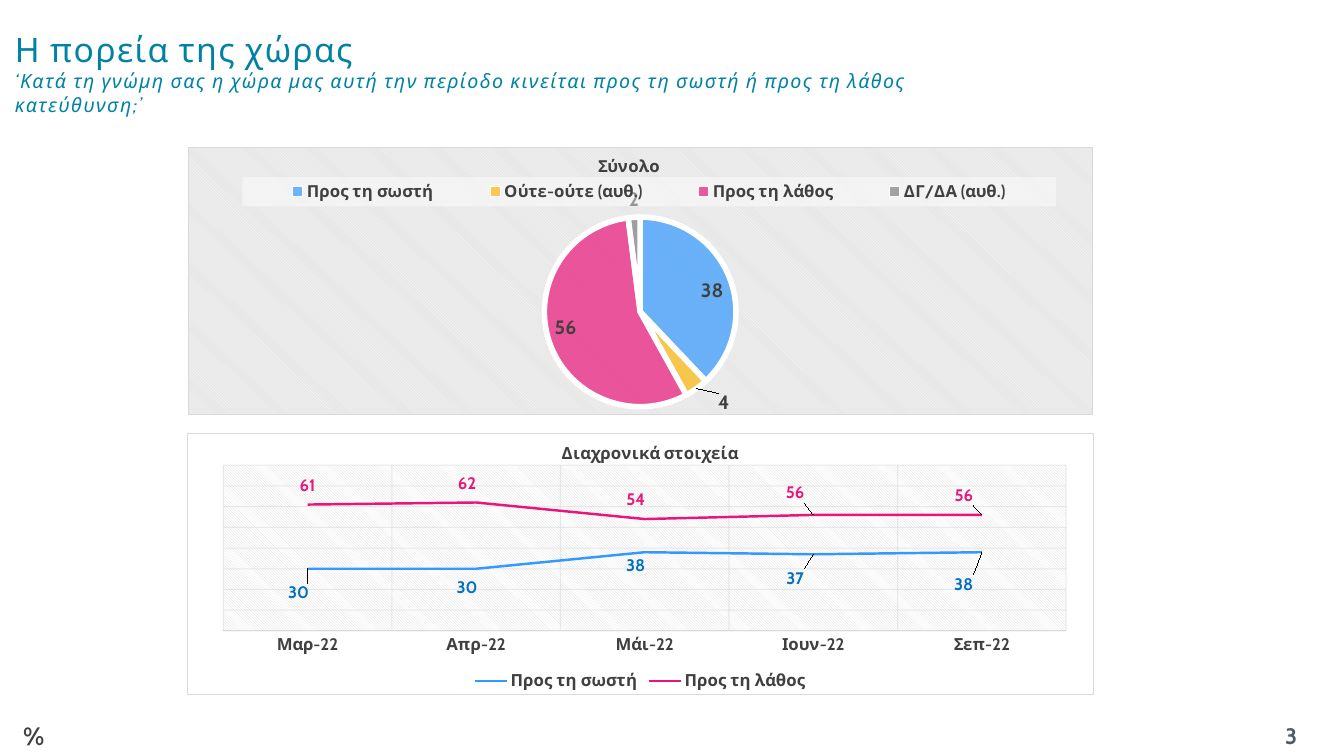
from pptx import Presentation
from pptx.chart.data import CategoryChartData
from pptx.dml.color import RGBColor
from pptx.enum.chart import XL_CHART_TYPE, XL_LABEL_POSITION, XL_LEGEND_POSITION, XL_TICK_MARK
from pptx.enum.text import MSO_ANCHOR, PP_ALIGN
from pptx.oxml import parse_xml
from pptx.oxml.ns import nsdecls, qn
from pptx.util import Inches, Pt

FONT = "Cabin"
TEAL, DARK, SLATE, PALE = "0082A5", "404040", "4E5B6F", "D9D9D9"
BLUE, YELLOW, PINK, GREY = "3399FF", "FEB80A", "EA157A", "808080"
RIGHT, WRONG = "Προς τη σωστή", "Προς τη λάθος"


def rgb(value):
    return RGBColor.from_string(value)


def style(font, size, color, bold=False, italic=False):
    font.name, font.size, font.bold, font.italic = FONT, Pt(size), bold, italic
    font.color.rgb = rgb(color)


def text_box(slide, box, anchor=MSO_ANCHOR.TOP, align=PP_ALIGN.LEFT):
    frame = slide.shapes.add_textbox(*map(Inches, box)).text_frame
    frame.word_wrap = True
    frame.vertical_anchor = anchor
    paragraph = frame.paragraphs[0]
    paragraph.alignment = align
    return paragraph


def add_run(paragraph, text, size, color, bold=False, italic=False, spacing=0):
    run = paragraph.add_run()
    run.text = text
    style(run.font, size, color, bold, italic)
    if spacing:
        run.font._element.set("spc", str(spacing * 100))


def set_alpha(color_element, percent):
    alpha = parse_xml(f'<a:alpha {nsdecls("a")} val="{percent * 1000}"/>')
    color_element.append(alpha)


def solid(color, alpha=100):
    return (f'<a:solidFill><a:srgbClr val="{color}"><a:alpha val="{alpha * 1000}"/>'
            '</a:srgbClr></a:solidFill>')


def pattern(preset, front, back):
    return (f'<a:pattFill prst="{preset}"><a:fgClr><a:srgbClr val="{front}"/></a:fgClr>'
            f'<a:bgClr><a:srgbClr val="{back}"/></a:bgClr></a:pattFill>')


def area_format(fill, border=None):
    line = f'<a:ln w="9525">{solid(border)}</a:ln>' if border else "<a:ln><a:noFill/></a:ln>"
    return parse_xml(f'<c:spPr {nsdecls("c", "a")}>{fill}{line}</c:spPr>')


def set_layout(element, x, y, size=None, inner=False, edge=True):
    """Place a chart part by shares of the chart area."""
    for old in element.findall(qn("c:layout")):
        element.remove(old)
    target = '<c:layoutTarget val="inner"/>' if inner else ""
    modes = '<c:xMode val="edge"/><c:yMode val="edge"/>' if edge else ""
    extent = f'<c:w val="{size[0]}"/><c:h val="{size[1]}"/>' if size else ""
    layout = parse_xml(
        f'<c:layout {nsdecls("c")}><c:manualLayout>{target}{modes}'
        f'<c:x val="{x}"/><c:y val="{y}"/>{extent}</c:manualLayout></c:layout>')
    overlay, index = element.find(qn("c:overlay")), element.find(qn("c:idx"))
    if overlay is not None:
        overlay.addprevious(layout)
    elif index is not None:
        index.addnext(layout)
    else:
        element.insert(0, layout)


def add_chart(slide, kind, box, categories, series, title, title_at, fill, plot, legend_side):
    data = CategoryChartData(number_format="0")
    data.categories = categories
    for name, values in series:
        data.add_series(name, values)
    chart = slide.shapes.add_chart(kind, *map(Inches, box), data).chart
    style(chart.font, 10, "000000")
    chart.has_title = True
    add_run(chart.chart_title.text_frame.paragraphs[0], title, 12, DARK, True)
    set_layout(chart.chart_title._element, *title_at)
    chart.has_legend = True
    chart.legend.position = legend_side
    chart.legend.include_in_layout = False
    style(chart.legend.font, 12, DARK, True)
    root = chart._chartSpace
    root.find(qn("c:chart")).addnext(area_format(fill, PALE))
    set_layout(root.find(".//" + qn("c:plotArea")), *plot, inner=True)
    return chart


def place_label(point, position, size, color, shift=None):
    label = point.data_label
    style(label.font, size, color, True)
    label.position = position
    if shift:
        set_layout(label._get_or_add_dLbl(), *shift, edge=False)


def add_total_pie(slide):
    chart = add_chart(
        slide, XL_CHART_TYPE.PIE, (1.86, 1.46, 8.98, 2.68),
        [RIGHT, "Ούτε-ούτε (αυθ.)", WRONG, "ΔΓ/ΔΑ (αυθ.)"], [("Σύνολο", (38, 4, 56, 2))],
        "Σύνολο", (0.45, 0.015), pattern("dkDnDiag", "FFFFFF", "E6E6E6"),
        (0, 0.26, (1, 0.71)), XL_LEGEND_POSITION.TOP)
    legend = chart.legend._element
    set_layout(legend, 0.06, 0.11, (0.9, 0.11))
    legend.find(qn("c:overlay")).addnext(area_format(solid("FFFFFF", 45)))

    pie = chart.plots[0]
    pie.vary_by_categories = True
    pie.has_data_labels = True
    labels = pie.data_labels
    labels.show_value = True
    labels.number_format, labels.number_format_is_linked = "0", False
    style(labels.font, 14, DARK, True)

    inside, outside = XL_LABEL_POSITION.INSIDE_END, XL_LABEL_POSITION.OUTSIDE_END
    slices = [(BLUE, inside, None), (YELLOW, outside, (0.02, 0)),
              (PINK, inside, None), (GREY, outside, None)]
    answers = pie.series[0]
    for index, (color, position, shift) in enumerate(slices):
        point = answers.points[index]
        point.format.fill.solid()
        point.format.fill.fore_color.rgb = rgb(color)
        place_label(point, position, 14, DARK, shift)
    # Translucent slices first, then their opaque white edges
    for slice_format in answers._element.findall(qn("c:dPt")):
        set_alpha(next(slice_format.iter(qn("a:srgbClr"))), 70)
    for index in range(len(slices)):
        edge = answers.points[index].format.line
        edge.color.rgb = rgb("FFFFFF")
        edge.width = Pt(4)


def soft_grid(axis):
    axis.has_major_gridlines = True
    line = axis.major_gridlines.format.line
    line.color.rgb, line.width = rgb(PALE), Pt(0.75)
    set_alpha(next(axis._element.find(qn("c:majorGridlines")).iter(qn("a:srgbClr"))), 54)


def add_trend_lines(slide):
    chart = add_chart(
        slide, XL_CHART_TYPE.LINE, (1.85, 4.3, 9, 2.6),
        ["Μαρ-22", "Απρ-22", "Μάι-22", "Ιουν-22", "Σεπ-22"],
        [(RIGHT, (30, 30, 38, 37, 38)), (WRONG, (61, 62, 54, 56, 56))],
        "Διαχρονικά στοιχεία", (0.41, 0.02), solid("FFFFFF"),
        (0.04, 0.12, (0.93, 0.635)), XL_LEGEND_POSITION.BOTTOM)
    plot_area = chart._chartSpace.find(".//" + qn("c:plotArea"))
    plot_area.append(area_format(pattern("ltDnDiag", PALE, "FFFFFF")))

    months, share = chart.category_axis, chart.value_axis
    months.major_tick_mark = XL_TICK_MARK.NONE
    style(months.tick_labels.font, 12, DARK, True)
    months.format.line.color.rgb, months.format.line.width = rgb(PALE), Pt(0.75)
    share.minimum_scale, share.maximum_scale, share.major_unit = 0, 80, 10
    share.visible = False
    soft_grid(months)
    soft_grid(share)

    # Line colour, label colour, label side, label shifts by month
    trends = [
        (BLUE, "0070C0", XL_LABEL_POSITION.BELOW,
         [(-0.01, 0.04), (-0.01, 0.02), (-0.01, 0), (-0.02, 0.04), (-0.02, 0.07)]),
        (PINK, PINK, XL_LABEL_POSITION.ABOVE,
         [(0, -0.02), (-0.01, -0.02), (-0.01, -0.02), (-0.02, -0.03), (-0.02, -0.02)]),
    ]
    for trend, (color, label_color, side, shifts) in zip(chart.plots[0].series, trends):
        trend.smooth = False
        trend.format.line.color.rgb = rgb(color)
        trend.format.line.width = Pt(1.75)
        for index, shift in enumerate(shifts):
            place_label(trend.points[index], side, 12, label_color, shift)


def main():
    deck = Presentation()
    deck.slide_width, deck.slide_height = Inches(13.33), Inches(7.5)
    slide = deck.slides.add_slide(deck.slide_layouts[6])

    # Heading and survey question
    heading = text_box(slide, (0.05, 0.13, 9.92, 1.18), MSO_ANCHOR.MIDDLE)
    add_run(heading, "Η πορεία της χώρας", 24, TEAL, spacing=1)
    heading.add_line_break()
    add_run(heading, "‘Κατά τη γνώμη σας η χώρα μας αυτή την περίοδο κινείται προς τη σωστή "
            "ή προς τη λάθος κατεύθυνση;’", 14, TEAL, italic=True, spacing=1)

    add_total_pie(slide)
    add_trend_lines(slide)

    # Footer: page number and unit
    page = text_box(slide, (12.28, 7.1, 1.05, 0.4), MSO_ANCHOR.MIDDLE, PP_ALIGN.CENTER)
    add_run(page, "3", 16, SLATE, True)
    add_run(text_box(slide, (0.13, 7.1, 0.71, 0.4)), "%", 18, DARK, True)

    deck.save("out.pptx")


if __name__ == "__main__":
    main()
